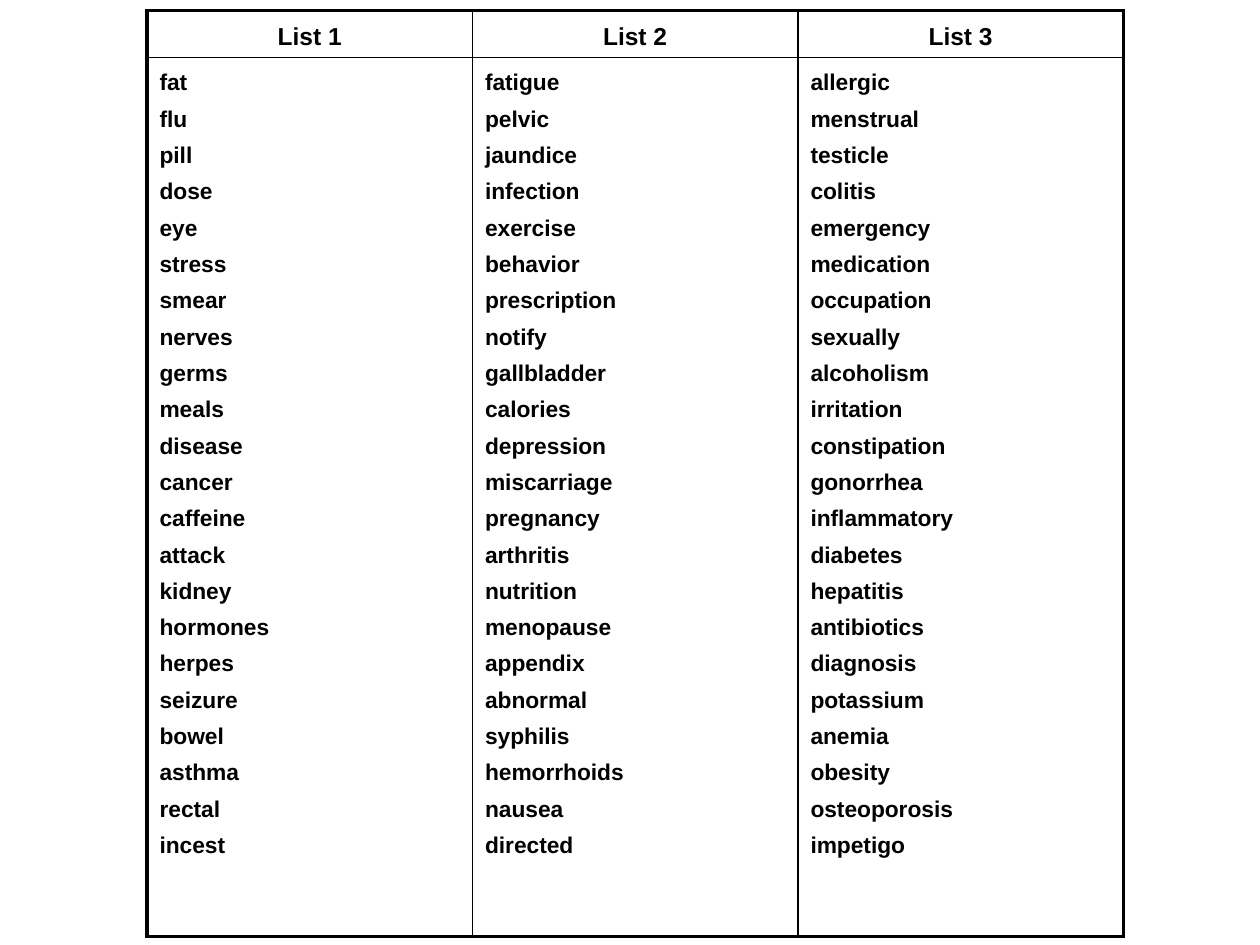
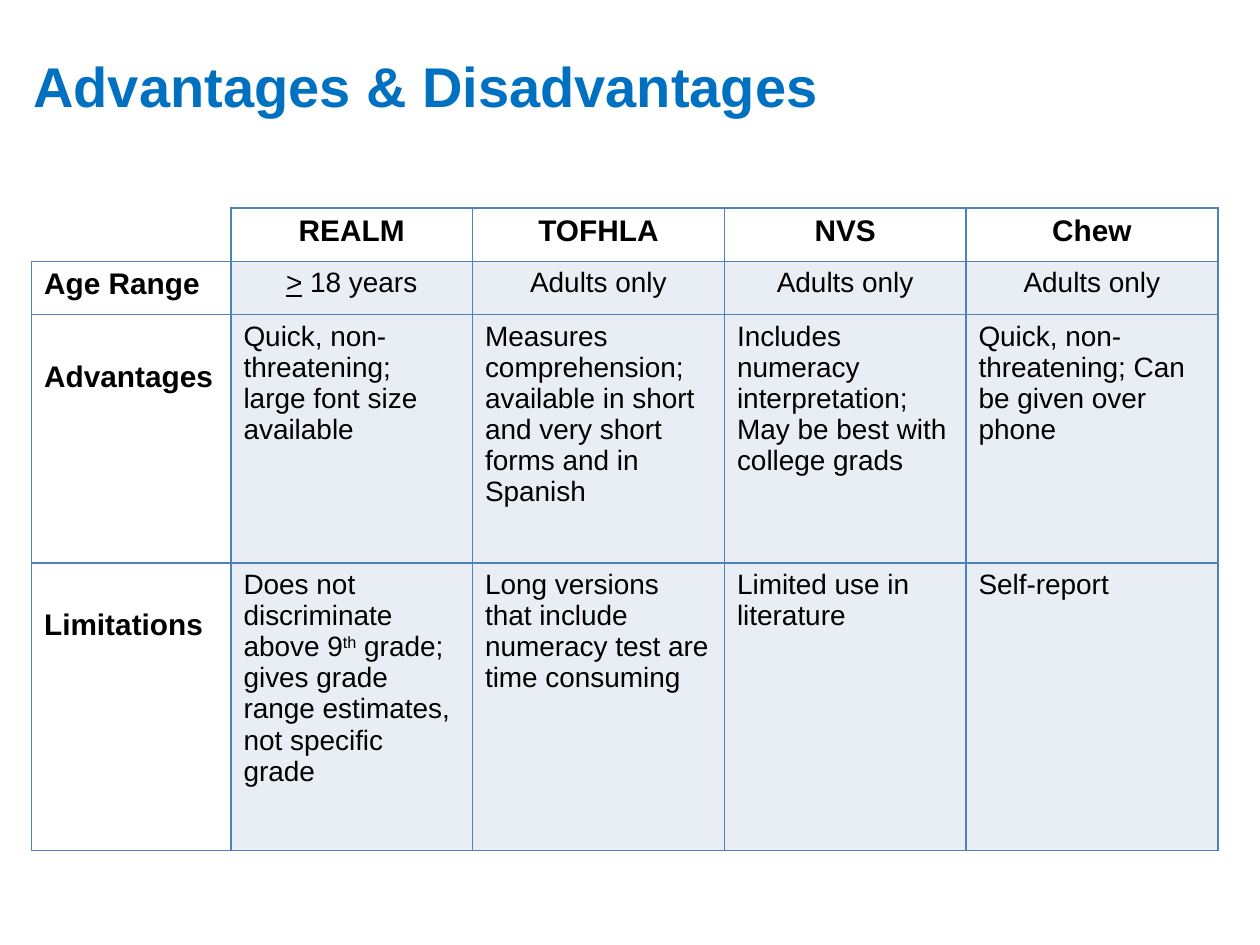
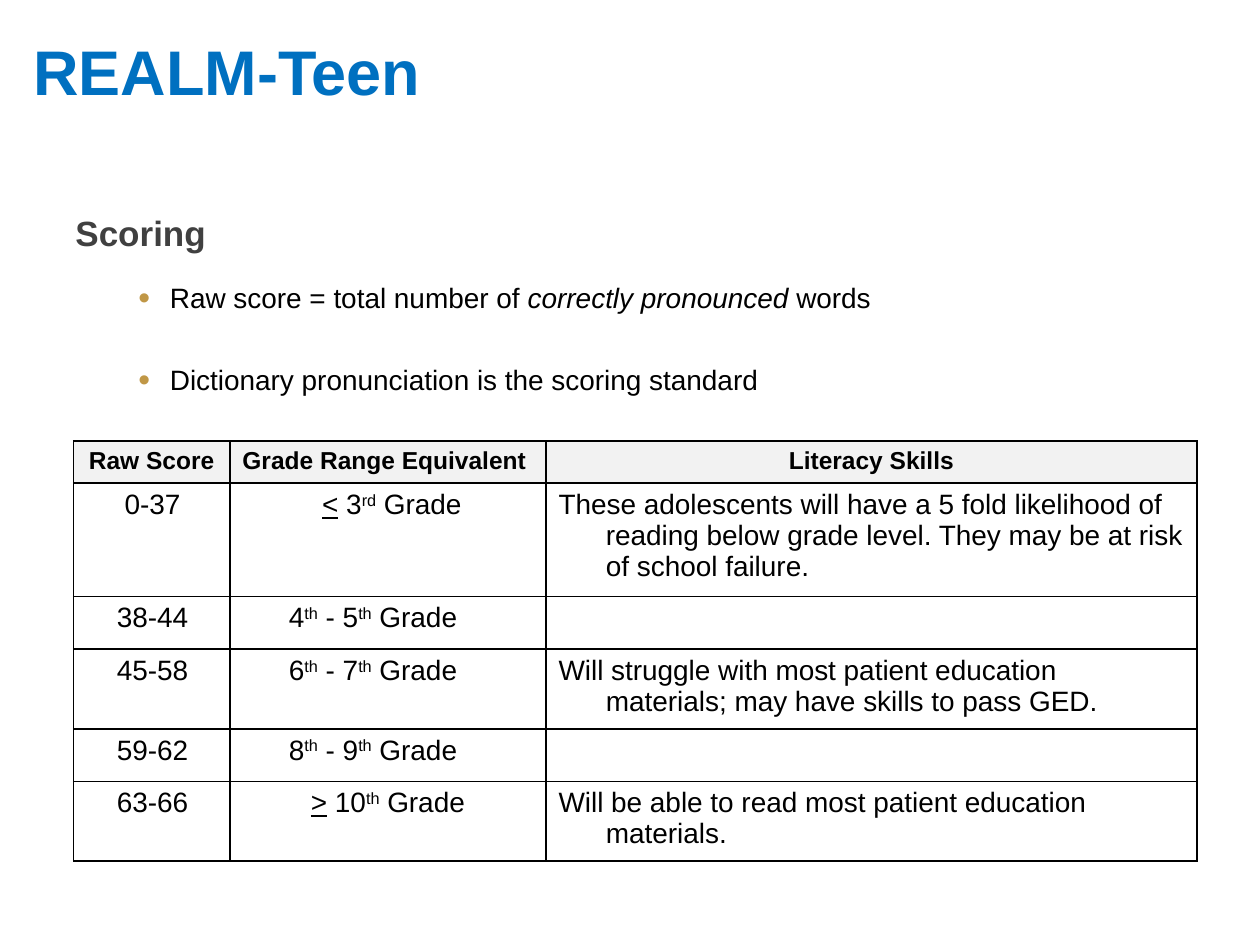
from lxml import etree
from pptx import Presentation
from pptx.dml.color import RGBColor
from pptx.enum import text
from pptx.oxml import ns
from pptx.util import Pt

COLORS = {
    "title": "0070C0", "heading": "404040", "ink": "000000", "bullet": "C09746",
    "paper": "FFFFFF", "blue_line": "4F81BD", "blue_tint": "E9EDF4", "gray_tint": "F2F2F2",
}
FONT = "Arial"
PLAIN_TABLE = "{2D5ABB26-0587-4C30-8999-92F81FD0307C}"
CENTER, LEFT = text.PP_ALIGN.CENTER, text.PP_ALIGN.LEFT

# Content: a paragraph is a string or a list of (words, span style)
WORD_LISTS = {
    "List 1": "fat flu pill dose eye stress smear nerves germs meals disease cancer caffeine "
              "attack kidney hormones herpes seizure bowel asthma rectal incest",
    "List 2": "fatigue pelvic jaundice infection exercise behavior prescription notify "
              "gallbladder calories depression miscarriage pregnancy arthritis nutrition "
              "menopause appendix abnormal syphilis hemorrhoids nausea directed",
    "List 3": "allergic menstrual testicle colitis emergency medication occupation sexually "
              "alcoholism irritation constipation gonorrhea inflammatory diabetes hepatitis "
              "antibiotics diagnosis potassium anemia obesity osteoporosis impetigo",
}

COMPARISON = [
    ["", "REALM", "TOFHLA", "NVS", "Chew"],
    ["Age Range", [(">", "under"), (" 18 years", "")],
     "Adults only", "Adults only", "Adults only"],
    ["Advantages",
     "Quick, non-threatening; large font size available",
     "Measures comprehension; available in short and very short forms and in Spanish",
     "Includes numeracy interpretation; May be best with college grads",
     "Quick, non-threatening; Can be given over phone"],
    ["Limitations",
     [("Does not discriminate above 9", ""), ("th", "super"),
      (" grade; gives grade range estimates, not specific grade", "")],
     "Long versions that include numeracy test are time consuming",
     "Limited use in literature",
     "Self-report"],
]

SCORING_POINTS = [
    [("Raw score = total number of ", ""), ("correctly pronounced", "italic"), (" words", "")],
    "Dictionary pronunciation is the scoring standard",
]


def grade_range(first, last):
    return [(first, ""), ("th", "super"), (f" - {last}", ""), ("th", "super"), (" Grade", "")]


SCORES = [
    ["Raw Score", "Grade Range Equivalent", "Literacy Skills"],
    ["0-37", [("<", "under"), (" 3", ""), ("rd", "super"), (" Grade", "")],
     "These adolescents will have a 5 fold likelihood of reading below grade level. "
     "They may be at risk of school failure."],
    ["38-44", grade_range(4, 5), ""],
    ["45-58", grade_range(6, 7),
     "Will struggle with most patient education materials; may have skills to pass GED."],
    ["59-62", grade_range(8, 9), ""],
    ["63-66", [(">", "under"), (" 10", ""), ("th", "super"), (" Grade", "")],
     "Will be able to read most patient education materials."],
]


# Text helpers
def rgb(name):
    return RGBColor.from_string(COLORS[name])


def assign(target, values):
    for name, value in values.items():
        setattr(target, name, value)


def write(para, content, size, color="ink", bold=False, indent=None, **layout):
    """Fill one paragraph; indent is (left margin, first-line offset) in points."""
    assign(para, layout)
    if indent:
        props = para._p.get_or_add_pPr()
        props.set("marL", str(Pt(indent[0])))
        props.set("indent", str(Pt(indent[1])))
    for words, style in [(content, "")] if isinstance(content, str) else content:
        span = para.add_run()
        span.text = str(words)
        assign(span.font, {"name": FONT, "size": Pt(size), "bold": bold,
                           "italic": style == "italic", "underline": style == "under"})
        span.font.color.rgb = rgb(color)
        if style == "super":
            span._r.get_or_add_rPr().set("baseline", "30000")


def add_bullet(para):
    props = para._p.get_or_add_pPr()
    tint = etree.SubElement(props, ns.qn("a:buClr"))
    etree.SubElement(tint, ns.qn("a:srgbClr"), val=COLORS["bullet"])
    etree.SubElement(props, ns.qn("a:buSzPct"), val="120000")
    etree.SubElement(props, ns.qn("a:buFont"), typeface=FONT)
    etree.SubElement(props, ns.qn("a:buChar"), char="•")


def add_box(page, left, top, width, height):
    box = page.shapes.add_textbox(Pt(left), Pt(top), Pt(width), Pt(height))
    box.text_frame.word_wrap = True
    return box.text_frame


def add_title(page, words, top, size):
    frame = add_box(page, 12, top, 498, size * 1.4)
    write(frame.paragraphs[0], words, size, "title", bold=True)


# Table helpers
def add_grid(page, left, top, widths, heights):
    frame = page.shapes.add_table(len(heights), len(widths), Pt(left), Pt(top),
                                  Pt(sum(widths)), Pt(sum(heights)))
    grid = frame.table
    grid._tbl.tblPr.find(ns.qn("a:tableStyleId")).text = PLAIN_TABLE
    grid.first_row = grid.horz_banding = False
    for column, width in zip(grid.columns, widths):
        column.width = Pt(width)
    for row, height in zip(grid.rows, heights):
        row.height = Pt(height)
    return grid


def style_cell(cell, fill, line, edges):
    """Draw the edges (left, right, top, bottom; 0 hides one), then the fill."""
    props = cell._tc.get_or_add_tcPr()
    for side, weight in zip("LRTB", edges):
        edge = etree.SubElement(props, ns.qn(f"a:ln{side}"), w=str(Pt(weight)))
        if weight:
            paint = etree.SubElement(edge, ns.qn("a:solidFill"))
            etree.SubElement(paint, ns.qn("a:srgbClr"), val=COLORS[line])
        else:
            etree.SubElement(edge, ns.qn("a:noFill"))
    if fill:
        cell.fill.solid()
        cell.fill.fore_color.rgb = rgb(fill)
    else:
        cell.fill.background()


# Slides
def build_word_lists(page):
    thick, thin = 2.25, 1
    grid = add_grid(page, 84, 6, [186] * 3, [27, 502])
    last = len(WORD_LISTS) - 1
    for col, (name, words) in enumerate(WORD_LISTS.items()):
        head, body = grid.cell(0, col), grid.cell(1, col)
        sides = (thin if col else thick, thick if col == last else thin)
        style_cell(head, "paper", "ink", (*sides, thick, thin))
        style_cell(body, "paper", "ink", (*sides, thin, thick))
        head.vertical_anchor = text.MSO_ANCHOR.MIDDLE
        write(head.text_frame.paragraphs[0], name, 14, bold=True,
              alignment=CENTER, line_spacing=1.2)
        frame = body.text_frame
        for index, word in enumerate(words.split()):
            para = frame.add_paragraph() if index else frame.paragraphs[0]
            write(para, word, 13, bold=True, line_spacing=1.25,
                  space_before=Pt(2.6 if index else 0))


def build_comparison(page):
    add_title(page, "Advantages & Disadvantages", 25.9, 32)
    grid = add_grid(page, 18, 118.8, [114, 138, 144, 138, 144], [30.6, 30.4, 142, 164.2])
    for row, entries in enumerate(COMPARISON):
        for col, entry in enumerate(entries):
            cell = grid.cell(row, col)
            label = row == 0 or col == 0
            outer = 1 if row or col else 0
            style_cell(cell, "paper" if label else "blue_tint", "blue_line",
                       (outer, 1, outer, 1))
            if col == 0 and row > 1:
                cell.margin_top = Pt(26)
            if entry:
                centered = row == 0 or (row == 1 and col)
                write(cell.text_frame.paragraphs[0], entry, 17 if label else 16,
                      bold=label, alignment=CENTER if centered else LEFT)


def score_layout(row, col):
    """Give the alignment and indent of one score cell."""
    hanging = (27, -27)
    if row == 0:
        return (LEFT, hanging) if col == 1 else (CENTER, None)
    if col == 0:
        return CENTER, (1, 0)
    if col == 2:
        return LEFT, hanging
    if row == 1:
        return CENTER, (4.5, 0)
    return (CENTER, None) if row == len(SCORES) - 1 else (LEFT, (26.6, 0))


def build_scoring(page):
    add_title(page, "REALM-Teen", 15.1, 36)
    frame = add_box(page, 36, 117.4, 666, 223)
    write(frame.paragraphs[0], "Scoring", 20, "heading", bold=True, space_after=Pt(6))
    for point in SCORING_POINTS:
        para = frame.add_paragraph()
        assign(para, {"level": 1, "line_spacing": 1.5, "space_after": Pt(18)})
        add_bullet(para)
        write(para, point, 16, indent=(54, -18))

    grid = add_grid(page, 42, 252, [89.3, 180.7, 372], [24, 64.8, 30, 45.6, 30, 45.4])
    for row, entries in enumerate(SCORES):
        for col, entry in enumerate(entries):
            cell = grid.cell(row, col)
            style_cell(cell, None if row else "gray_tint", "ink", (1, 1, 1, 1))
            if entry:
                align, indent = score_layout(row, col)
                write(cell.text_frame.paragraphs[0], entry, 16 if row else 14,
                      bold=row == 0, indent=indent, alignment=align)


def main():
    deck = Presentation()
    deck.slide_width, deck.slide_height = Pt(720), Pt(540)
    for build in (build_word_lists, build_comparison, build_scoring):
        build(deck.slides.add_slide(deck.slide_layouts[6]))
    deck.save("out.pptx")


if __name__ == "__main__":
    main()
